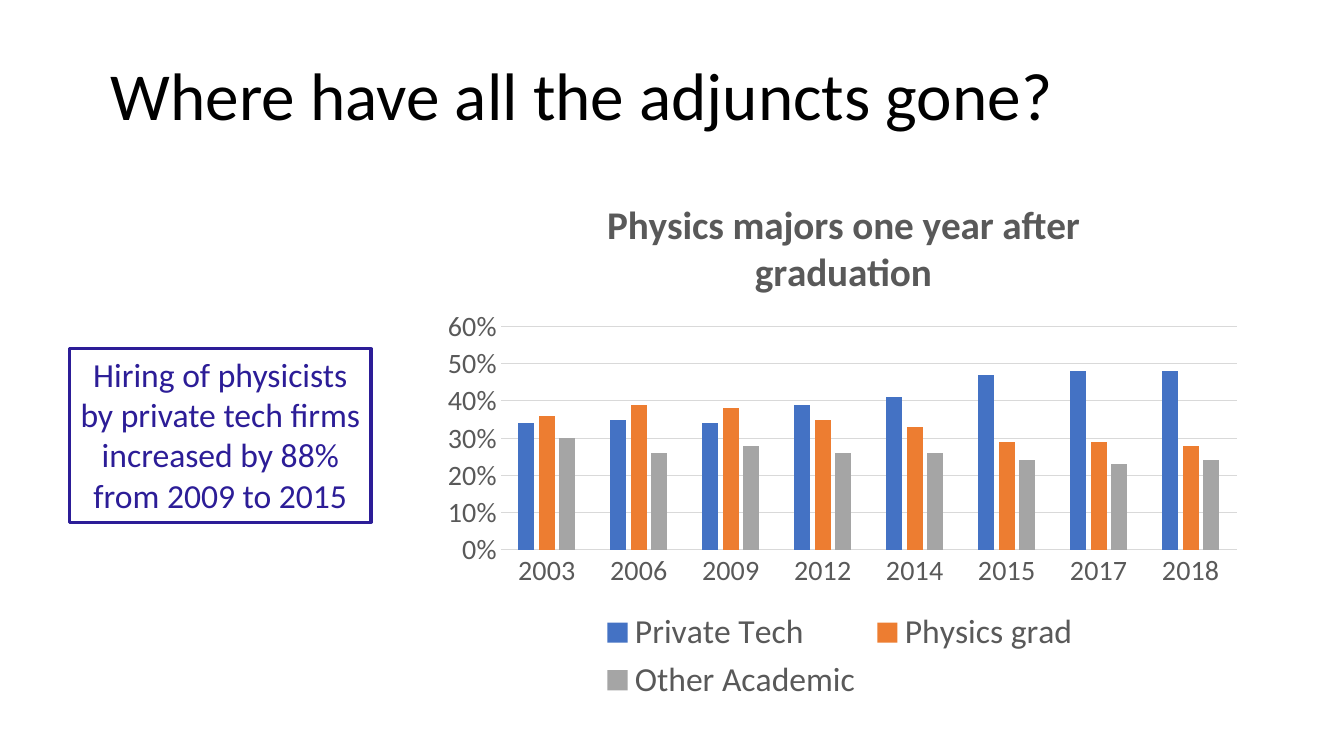
from dataclasses import dataclass

from lxml import etree
from pptx import Presentation
from pptx.chart import data as chart_data
from pptx.dml import color
from pptx.enum import chart as ch
from pptx.enum import shapes, text
from pptx.oxml import ns
from pptx.util import Inches, Pt

FONT = "Calibri"
COLORS = {
    "black": "000000",
    "indigo": "2C1D97",
    "gray": "595959",
    "grid": "D9D9D9",
    "blue": "4472C4",
    "orange": "ED7D31",
    "silver": "A5A5A5",
}


@dataclass
class Series:
    name: str
    color: str
    percents: list[int]


@dataclass
class TextBlock:
    box: tuple[float, float, float, float]
    words: str
    size: int
    color: str
    align: text.PP_ALIGN
    outlined: bool = False


YEARS = ["2003", "2006", "2009", "2012", "2014", "2015", "2017", "2018"]
SERIES = [
    Series("Private Tech", "blue", [34, 35, 34, 39, 41, 47, 48, 48]),
    Series("Physics grad", "orange", [36, 39, 38, 35, 33, 29, 29, 28]),
    Series("Other Academic", "silver", [30, 26, 28, 26, 26, 24, 23, 24]),
]
TEXTS = [
    TextBlock((1, 0.48, 10.71, 0.91), "Where have all the adjuncts gone?",
              48, "black", text.PP_ALIGN.LEFT),
    TextBlock((0.69, 3.46, 2.99, 1.72),
              "Hiring of physicists by private tech firms "
              "increased by 88% from 2009 to 2015",
              24, "indigo", text.PP_ALIGN.CENTER, outlined=True),
]


def rgb(name: str) -> color.RGBColor:
    return color.RGBColor.from_string(COLORS[name])


def set_font(font, size: int, color_name: str, bold: bool = False) -> None:
    font.name, font.size, font.bold = FONT, Pt(size), bold
    font.color.rgb = rgb(color_name)


def set_line(line, color_name: str, width: float) -> None:
    line.color.rgb = rgb(color_name)
    line.width = Pt(width)


def place(part, index: int, **fractions: float) -> None:
    """Fix a chart part at fractions of the chart's size."""
    for old in part.findall(ns.qn("c:layout")):
        part.remove(old)
    layout = etree.Element(ns.qn("c:layout"))
    part.insert(index, layout)
    manual = etree.SubElement(layout, ns.qn("c:manualLayout"))
    settings = {"xMode": "edge", "yMode": "edge", **fractions}
    if "w" in fractions:
        settings = {"layoutTarget": "inner", **settings}
    for tag, value in settings.items():
        etree.SubElement(manual, ns.qn(f"c:{tag}")).set("val", str(value))


def add_text(slide, block: TextBlock) -> None:
    box = [Inches(n) for n in block.box]
    if block.outlined:
        sp = slide.shapes.add_shape(shapes.MSO_SHAPE.RECTANGLE, *box)
        sp.shadow.inherit = False
        sp.fill.background()
        set_line(sp.line, block.color, 2.25)
    else:
        sp = slide.shapes.add_textbox(*box)
    tf = sp.text_frame
    tf.word_wrap = True
    tf.auto_size = text.MSO_AUTO_SIZE.SHAPE_TO_FIT_TEXT
    tf.vertical_anchor = text.MSO_ANCHOR.TOP
    p = tf.paragraphs[0]
    p.text = block.words
    p.alignment = block.align
    set_font(p.font, block.size, block.color)


def add_graduates_chart(slide) -> None:
    data = chart_data.CategoryChartData(number_format="0%")
    data.categories = YEARS
    for series in SERIES:
        data.add_series(series.name, [n / 100 for n in series.percents])
    box = [Inches(n) for n in (4.23, 1.62, 8.2, 5.4)]
    chart = slide.shapes.add_chart(
        ch.XL_CHART_TYPE.COLUMN_CLUSTERED, *box, data).chart
    set_font(chart.font, 10, "black")

    # Title
    chart.has_title = True
    p = chart.chart_title.text_frame.paragraphs[0]
    p.text = "Physics majors one year after graduation"
    set_font(p.font, 28, "gray", bold=True)
    chart_xml = chart.element.find(ns.qn("c:chart"))
    place(chart_xml.find(ns.qn("c:title")), 1, x=0.21, y=0.05)

    # Columns
    plot = chart.plots[0]
    plot.gap_width, plot.overlap = 219, -27
    plot.vary_by_categories = False
    for column, series in zip(plot.series, SERIES):
        column.format.fill.solid()
        column.format.fill.fore_color.rgb = rgb(series.color)
    place(chart_xml.find(ns.qn("c:plotArea")), 0,
          x=0.09, y=0.3, w=0.89, h=0.41)

    # Axes
    years, shares = chart.category_axis, chart.value_axis
    for axis in (years, shares):
        axis.major_tick_mark = axis.minor_tick_mark = ch.XL_TICK_MARK.NONE
        set_font(axis.tick_labels.font, 20, "gray")
    set_line(years.format.line, "grid", 0.75)
    shares.format.line.fill.background()
    set_line(shares.major_gridlines.format.line, "grid", 0.75)
    shares.minimum_scale, shares.maximum_scale, shares.major_unit = 0, 0.6, 0.1
    shares.tick_labels.number_format = "0%"
    shares.tick_labels.number_format_is_linked = False

    # Legend
    chart.has_legend = True
    chart.legend.position = ch.XL_LEGEND_POSITION.BOTTOM
    chart.legend.include_in_layout = False
    set_font(chart.legend.font, 24, "gray")


def main() -> None:
    prs = Presentation()
    prs.slide_width, prs.slide_height = Inches(13.33), Inches(7.5)
    slide = prs.slides.add_slide(prs.slide_layouts[6])
    add_graduates_chart(slide)
    for block in TEXTS:
        add_text(slide, block)
    prs.save("out.pptx")


if __name__ == "__main__":
    main()
